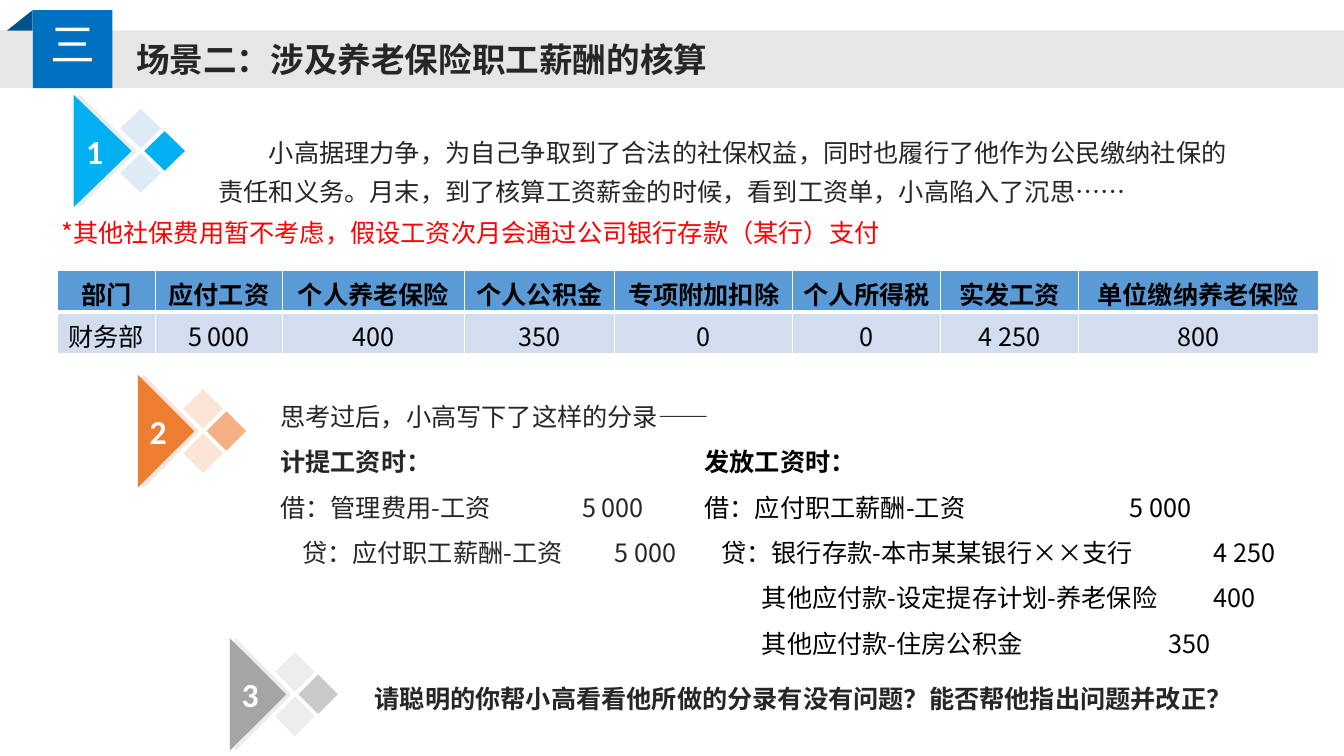
"""Build the payroll accounting scenario slide."""
from lxml.etree import SubElement
from pptx import Presentation
from pptx.dml.color import RGBColor
from pptx.enum.shapes import MSO_SHAPE
from pptx.enum.text import MSO_ANCHOR, MSO_AUTO_SIZE, PP_ALIGN
from pptx.oxml.ns import qn
from pptx.util import Pt

WHITE = RGBColor(0xFF, 0xFF, 0xFF)
BLACK = RGBColor(0, 0, 0)
INK = RGBColor(0x26, 0x26, 0x26)
RED = RGBColor(0xFF, 0, 0)
BAND = RGBColor(0xD9, 0xD9, 0xD9)
BLUE = RGBColor(0x00, 0x70, 0xC0)
NAVY = RGBColor(0x00, 0x51, 0x8E)
CYAN = RGBColor(0x00, 0xB0, 0xF0)
PALE_BLUE = RGBColor(0xDE, 0xEB, 0xF7)
ORANGE = RGBColor(0xED, 0x7D, 0x31)
PEACH = RGBColor(0xF4, 0xB1, 0x83)
PALE_ORANGE = RGBColor(0xFB, 0xE5, 0xD6)
GREY = RGBColor(0xA5, 0xA5, 0xA5)
SILVER = RGBColor(0xC9, 0xC9, 0xC9)
PALE_GREY = RGBColor(0xED, 0xED, 0xED)
HEAD_FILL = RGBColor(0x5B, 0x9B, 0xD5)
ROW_FILL = RGBColor(0xD2, 0xDE, 0xEF)
SANS = "Noto Sans CJK SC"

TITLE = "场景二：涉及养老保险职工薪酬的核算"
STORY = "小高据理力争，为自己争取到了合法的社保权益，同时也履行了他作为公民缴纳社保的责任和义务。月末，到了核算工资薪金的时候，看到工资单，小高陷入了沉思……"
NOTE = "*其他社保费用暂不考虑，假设工资次月会通过公司银行存款（某行）支付"
THOUGHT = "思考过后，小高写下了这样的分录——"
QUESTION = "请聪明的你帮小高看看他所做的分录有没有问题？能否帮他指出问题并改正？"
PAYROLL = [
    ("部门", "应付工资", "个人养老保险", "个人公积金", "专项附加扣除", "个人所得税", "实发工资", "单位缴纳养老保险"),
    ("财务部", "5 000", "400", "350", "0", "0", "4 250", "800"),
]
COL_WIDTHS = (70, 90.9, 129.8, 107.5, 126.9, 106, 98.1, 171.6)
ACCRUAL = [
    ("计提工资时：", True, 0),
    ("借：管理费用-工资", False, 0),
    ("贷：应付职工薪酬-工资", False, 15.5),
]
ACCRUAL_SUMS = [("5 000", False, 0), ("5 000", False, 23.5)]
PAYMENT = [
    ("发放工资时：", True, 0),
    ("借：应付职工薪酬-工资", False, 0),
    ("贷：银行存款-本市某某银行××支行", False, 12),
    ("其他应付款-设定提存计划-养老保险", False, 41),
    ("其他应付款-住房公积金", False, 41),
]
PAYMENT_SUMS = [("5 000", False, 0), ("4 250", False, 60), ("400", False, 60), ("350", False, 28)]
ENTRY_TOP = 304.6
LINE_PITCH = 32.4
MARKERS = [
    ("1", 52.6, 67.7, 1.03, CYAN, CYAN, PALE_BLUE, PALE_GREY),
    ("2", 98.6, 267.8, 1, ORANGE, PEACH, PALE_ORANGE, PALE_ORANGE),
    ("3", 164.2, 455.8, 1, GREY, SILVER, PALE_GREY, PALE_GREY),
]
TRIANGLE = [(0, 0), (40.3, 40.2), (0, 80.3)]
CHEVRON = [(4.3, 0), (43.9, 40.2), (4.3, 80.3), (2.2, 78.3), (40.3, 40.2), (2.2, 2)]
DIAMONDS = [(32.4, 10), (32.4, 41.8), (49, 26)]
DIAMOND_SIZE = 28.2
FOLD = [(5, 21.8), (23.4, 7.2), (23.4, 21.8)]


def apply(obj, **formats):
    for name, value in formats.items():
        setattr(obj, name, value)


def paint(sp, color):
    sp.shadow.inherit = False
    sp.fill.solid()
    sp.fill.fore_color.rgb = color
    sp.line.fill.background()
    return sp


def preset(s, kind, x, y, w, h, color):
    return paint(s.shapes.add_shape(kind, Pt(x), Pt(y), Pt(w), Pt(h)), color)


def outline(s, points, color, x=0, y=0, sx=1):
    pts = [(Pt(x + px * sx), Pt(y + py)) for px, py in points]
    fb = s.shapes.build_freeform(*pts[0])
    fb.add_line_segments(pts[1:], close=True)
    return paint(fb.convert_to_shape(), color)


def write(p, text, size=18, color=INK, bold=False, font=SANS, align=PP_ALIGN.LEFT):
    p.alignment = align
    r = p.add_run()
    r.text = text
    apply(r.font, name=font, size=Pt(size), bold=bold)
    SubElement(r._r.get_or_add_rPr(), qn("a:ea"), typeface=font)
    r.font.color.rgb = color


def place(sp, x, y, w, h):
    apply(sp, left=Pt(x), top=Pt(y), width=Pt(w), height=Pt(h))
    apply(sp.text_frame, word_wrap=True, auto_size=MSO_AUTO_SIZE.NONE,
          vertical_anchor=MSO_ANCHOR.TOP)
    return sp.text_frame


def text_box(s, x, y, w, h, text, spacing=1.0, indent=0, **formats):
    tf = place(s.shapes.add_textbox(0, 0, 0, 0), x, y, w, h)
    p = tf.paragraphs[0]
    p.line_spacing = spacing
    p._p.get_or_add_pPr().set("indent", str(Pt(indent)))
    write(p, text, **formats)
    return tf


def column(sp, x, y, w, lines, color):
    tf = place(sp, x, y, w, LINE_PITCH * len(lines) + 7.2)
    apply(tf, margin_left=0, margin_right=0)
    for i, (text, bold, indent) in enumerate(lines):
        p = tf.add_paragraph() if i else tf.paragraphs[0]
        pPr = p._p.get_or_add_pPr()
        pPr.set("marL", str(Pt(indent)))
        pPr.set("indent", "0")
        SubElement(pPr, qn("a:buNone"))
        apply(p, line_spacing=1.5, space_before=Pt(0))
        write(p, text, color=color, bold=bold)


def journal(s, sp, x, w, lines, sums, sums_x, sums_w, color):
    column(sp, x, ENTRY_TOP, w, lines, color)
    sums_box = s.shapes.add_textbox(0, 0, 0, 0)
    column(sums_box, sums_x, ENTRY_TOP + LINE_PITCH, sums_w, sums, color)


def marker(s, number, x, y, sx, main, accent, soft, shade):
    for (dx, dy), color in zip(DIAMONDS, (soft, soft, accent)):
        preset(s, MSO_SHAPE.DIAMOND, x + dx * sx, y + dy, DIAMOND_SIZE * sx, DIAMOND_SIZE, color)
    outline(s, CHEVRON, shade, x, y, sx)
    tf = outline(s, TRIANGLE, main, x, y, sx).text_frame
    apply(tf, margin_left=0, margin_top=0, margin_right=Pt(11.5), margin_bottom=0,
          vertical_anchor=MSO_ANCHOR.MIDDLE, word_wrap=True)
    write(tf.paragraphs[0], number, 24, WHITE, True, "Calibri", PP_ALIGN.CENTER)


def payroll_table(s, x, y, row_height):
    frame = s.shapes.add_table(len(PAYROLL), len(COL_WIDTHS), Pt(x), Pt(y),
                               Pt(sum(COL_WIDTHS)), Pt(row_height * len(PAYROLL)))
    table = frame.table
    table.horz_banding = False
    for col, width in zip(table.columns, COL_WIDTHS):
        col.width = Pt(width)
    for i, row in enumerate(PAYROLL):
        head = i == 0
        for j, text in enumerate(row):
            cell = table.cell(i, j)
            apply(cell, vertical_anchor=MSO_ANCHOR.MIDDLE, margin_bottom=0)
            for side in "LRTB":
                width = 3 if head and side == "B" else 1
                ln = SubElement(cell._tc.get_or_add_tcPr(), qn(f"a:ln{side}"), w=str(Pt(width)))
                SubElement(SubElement(ln, qn("a:solidFill")), qn("a:srgbClr"), val=str(WHITE))
            cell.fill.solid()
            cell.fill.fore_color.rgb = HEAD_FILL if head else ROW_FILL
            write(cell.text_frame.paragraphs[0], text, color=BLACK, bold=head, align=PP_ALIGN.CENTER)


def main():
    prs = Presentation()
    apply(prs, slide_width=Pt(960), slide_height=Pt(540))
    s = prs.slides.add_slide(prs.slide_layouts[3])
    title, accrual, payment = s.placeholders

    band = preset(s, MSO_SHAPE.RECTANGLE, 0, 21.8, 960, 41, BAND)
    tint = band.element.find(".//" + qn("a:srgbClr"))
    SubElement(tint, qn("a:alpha"), val="65000")
    preset(s, MSO_SHAPE.RECTANGLE, 23.4, 7.2, 56.9, 55.8, BLUE)
    outline(s, FOLD, NAVY)
    s.shapes.element.append(title.element)
    write(place(title, 90, 24.2, 426, 36.4).paragraphs[0], TITLE, 24, bold=True)
    tf = text_box(s, 28.8, 8.6, 46.8, 46, "三", size=32, color=WHITE, font="Noto Sans CJK JP")
    tf.word_wrap = False

    for item in MARKERS:
        marker(s, *item)
    text_box(s, 149, 87.8, 743, 61.2, STORY, spacing=1.3, indent=36)
    text_box(s, 36.7, 151.9, 614, 29, NOTE, color=RED)
    payroll_table(s, 41, 193, 29.2)
    text_box(s, 193, ENTRY_TOP - LINE_PITCH, 360, LINE_PITCH, THOUGHT, spacing=1.5)
    journal(s, accrual, 200.2, 215, ACCRUAL, ACCRUAL_SUMS, 415.8, 80, INK)
    journal(s, payment, 503.2, 350, PAYMENT, PAYMENT_SUMS, 807, 142, BLACK)
    text_box(s, 260.6, 478, 650, 33, QUESTION, spacing=1.3, bold=True)
    prs.save("out.pptx")


if __name__ == "__main__":
    main()
